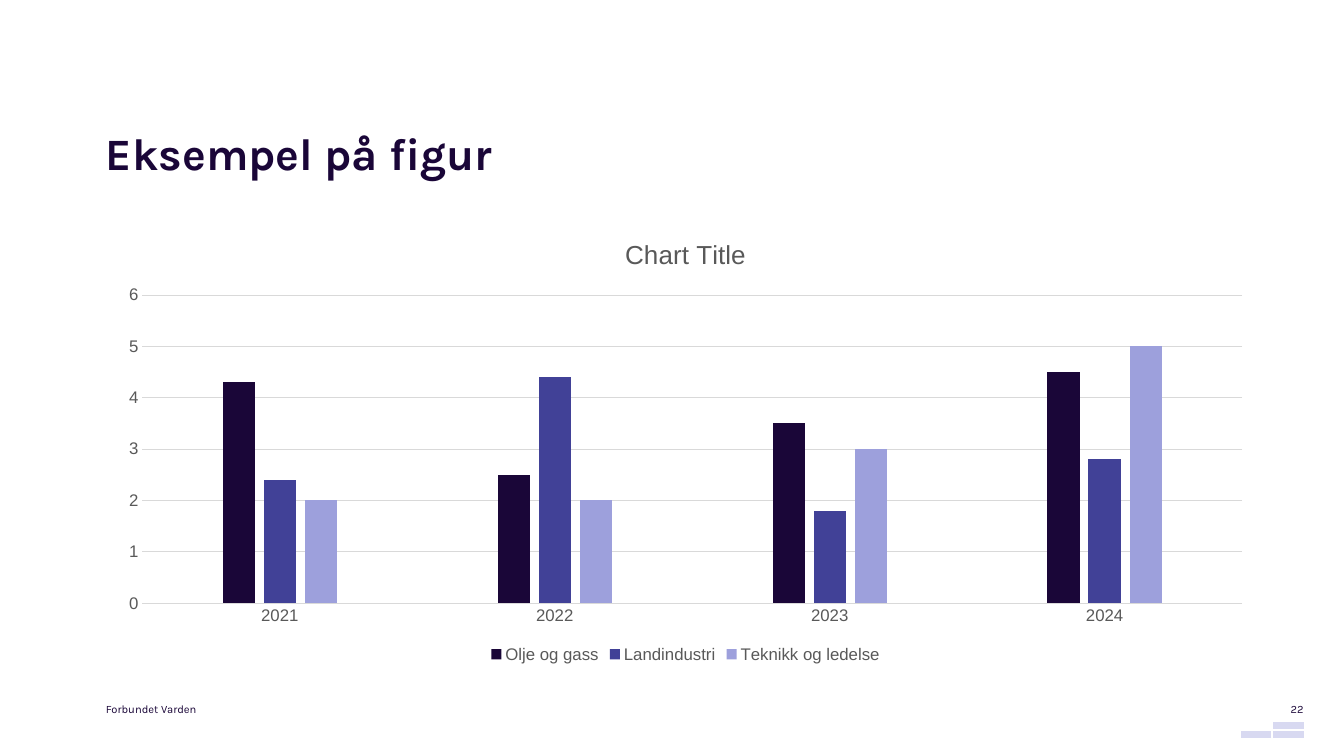
from dataclasses import dataclass

from lxml import etree
from pptx import Presentation
from pptx import util as u
from pptx.chart.data import CategoryChartData
from pptx.dml.color import RGBColor
from pptx.enum import chart as ch
from pptx.enum import shapes, text
from pptx.oxml.ns import qn


@dataclass(frozen=True)
class Theme:
    """Colours, fonts and type sizes of the slide."""
    ink: str = "1A0638"
    series: tuple = ("1A0638", "414197", "9DA0DC")
    label: str = "595959"
    grid: str = "D9D9D9"
    brick: str = "D8D9F1"
    font: str = "Karla"
    chart_font: str = "Arial"
    title_size: float = 32
    chart_title_size: float = 18.6
    label_size: float = 12
    footer_size: float = 8


THEME = Theme()
WIDTH, HEIGHT = 13.33, 7.5
LEFT, RIGHT = 1.05, 12.93
CATEGORIES = ("2021", "2022", "2023", "2024")
SERIES = {
    "Olje og gass": (4.3, 2.5, 3.5, 4.5),
    "Landindustri": (2.4, 4.4, 1.8, 2.8),
    "Teknikk og ledelse": (2, 2, 3, 5),
}


def inches(box):
    """Convert a box of inches to slide lengths."""
    return [u.Inches(n) for n in box]


def style_font(font, size, color, name, bold=False):
    """Apply size, colour, face and weight to a font."""
    font.size, font.name, font.bold = u.Pt(size), name, bold
    font.color.rgb = RGBColor.from_string(color)


def style_line(line, color, width):
    """Give a line its colour and width."""
    line.color.rgb = RGBColor.from_string(color)
    line.width = u.Pt(width)


def write(sp, content, size=THEME.footer_size, bold=False, spacing=None,
          align=text.PP_ALIGN.LEFT, anchor=text.MSO_ANCHOR.TOP):
    """Fill a shape with one formatted paragraph."""
    tf = sp.text_frame
    tf.margin_left = tf.margin_top = tf.margin_right = tf.margin_bottom = 0
    tf.word_wrap, tf.auto_size = True, text.MSO_AUTO_SIZE.NONE
    tf.vertical_anchor = anchor
    p = tf.paragraphs[0]
    p.alignment, p.line_spacing = align, spacing
    r = p.add_run()
    r.text = content
    style_font(r.font, size, THEME.ink, THEME.font, bold)


def add_title(s, box, content):
    """Place the title placeholder in the box."""
    sp = s.shapes.title
    sp.left, sp.top, sp.width, sp.height = inches(box)
    write(sp, content, size=THEME.title_size, bold=True, spacing=1.1,
          anchor=text.MSO_ANCHOR.BOTTOM)


def add_figure(s, box):
    """Draw the clustered column chart in the box."""
    data = CategoryChartData()
    data.categories = CATEGORIES
    for name, values in SERIES.items():
        data.add_series(name, values)
    kind = ch.XL_CHART_TYPE.COLUMN_CLUSTERED
    chart = s.shapes.add_chart(kind, *inches(box), data).chart
    labels = (THEME.label_size, THEME.label, THEME.chart_font)
    style_font(chart.font, *labels)

    chart.has_title = True
    chart.chart_title.include_in_layout = False
    r = chart.chart_title.text_frame.paragraphs[0].add_run()
    r.text = "Chart Title"
    style_font(r.font, THEME.chart_title_size, THEME.label, THEME.chart_font)

    chart.has_legend = True
    chart.legend.position = ch.XL_LEGEND_POSITION.BOTTOM
    chart.legend.include_in_layout = False
    style_font(chart.legend.font, *labels)

    for axis in (chart.category_axis, chart.value_axis):
        axis.major_tick_mark = axis.minor_tick_mark = ch.XL_TICK_MARK.NONE
        style_font(axis.tick_labels.font, *labels)
    style_line(chart.category_axis.format.line, THEME.grid, 0.75)
    values = chart.value_axis
    values.minimum_scale, values.maximum_scale, values.major_unit = 0, 6, 1
    values.format.line.fill.background()
    values.has_major_gridlines = True
    style_line(values.major_gridlines.format.line, THEME.grid, 0.75)

    plot = chart.plots[0]
    plot.gap_width, plot.overlap, plot.vary_by_categories = 497, -27, False
    for series, color in zip(plot.series, THEME.series):
        series.format.fill.solid()
        series.format.fill.fore_color.rgb = RGBColor.from_string(color)


def add_bricks(s, box):
    """Draw three bars in a two by two grid, leaving the upper left empty."""
    left, top, width, height = box
    gap = 0.02
    length = (width - gap) / 2
    for col, row in ((1, 1), (1, 0), (0, 1)):
        x, y = left + col * (length + gap), top + row * height
        line = s.shapes.add_connector(shapes.MSO_CONNECTOR.STRAIGHT,
                                      *inches((x + length, y, x, y)))
        style_line(line.line, THEME.brick, 4.75)
        etree.SubElement(line.element.spPr, qn("a:effectLst"))


def add_footer(s, box, name, number):
    """Place the sender at the left and the page number at the right."""
    left, top, width, height = box
    number_width = 0.38
    sender = s.shapes.add_textbox(*inches((left, top, 2, height)))
    write(sender, name)
    page = s.shapes.add_textbox(
        *inches((left + width - number_width, top, number_width, height)))
    write(page, number, align=text.PP_ALIGN.RIGHT)


def build_figure_slide(prs):
    """Add the slide with a title, a chart and a footer."""
    s = prs.slides.add_slide(prs.slide_layouts[5])
    add_bricks(s, (RIGHT - 0.62, 7.2, 0.62, 0.09))
    add_title(s, (LEFT, 0.55, 11.27, 1.23), "Eksempel på figur")
    add_figure(s, (LEFT, 2.16, 11.5, 4.46))
    add_footer(s, (LEFT, 6.97, RIGHT - LEFT, 0.19), "Forbundet Varden", "22")


def main():
    """Build and save the presentation."""
    prs = Presentation()
    prs.slide_width, prs.slide_height = inches((WIDTH, HEIGHT))
    build_figure_slide(prs)
    prs.save("out.pptx")


if __name__ == "__main__":
    main()
